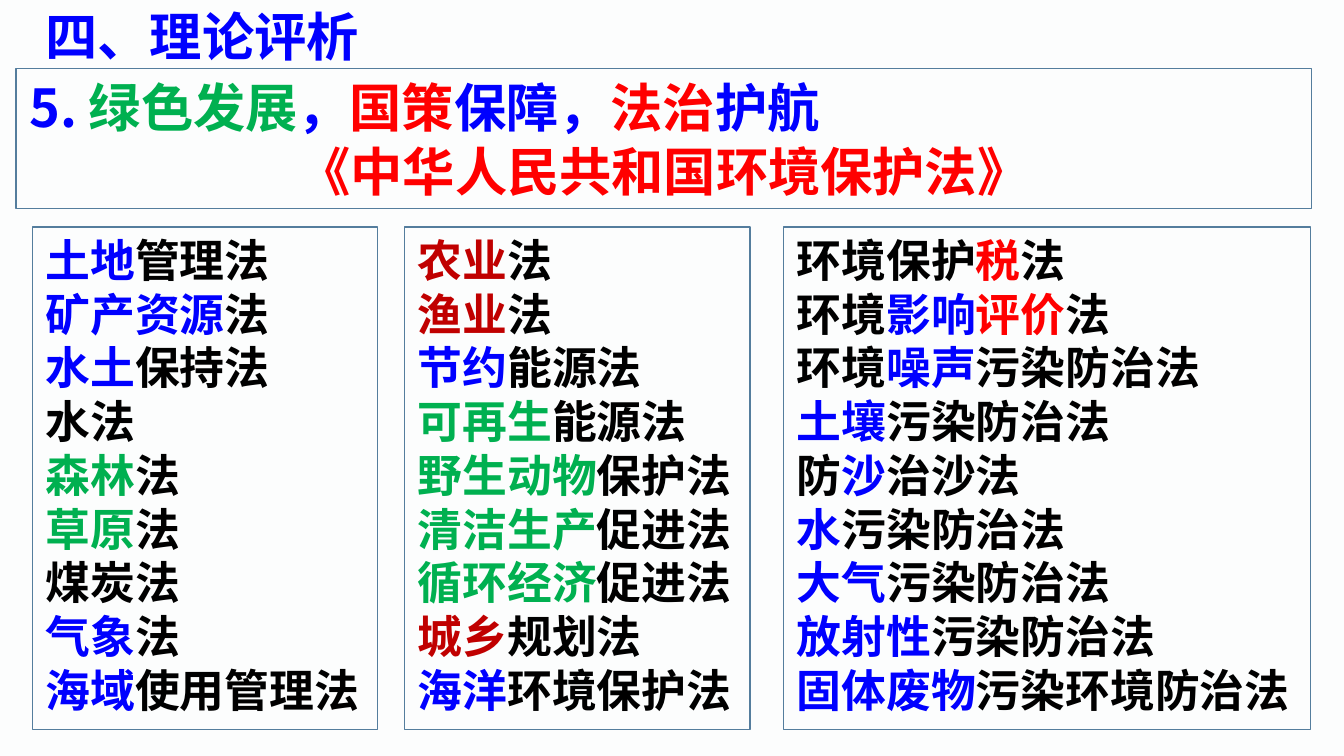
from pptx import Presentation
from pptx.dml.color import RGBColor
from pptx.enum import shapes, text
from pptx.oxml import ns
from pptx.util import Inches, Pt
from lxml import etree

FONT = "Noto Sans CJK SC"
COLORS = {
    "blue": "0000FF", "green": "00B050", "red": "FF0000", "brown": "C00000",
    "black": "000000", "border": "547D9D", "paper": "FCFDFD",
}

# Each line of text is a list of (words, colour name)
HEADLINE = [
    [("5. ", "blue"), ("绿色发展", "green"), ("，", "blue"), ("国策", "red"),
     ("保障，", "blue"), ("法治", "red"), ("护航", "blue")],
    [("《中华人民共和国环境保护法》", "red")],
]
RESOURCE_LAWS = [
    [("土地", "blue"), ("管理法", "black")],
    [("矿产资源", "blue"), ("法", "black")],
    [("水土", "blue"), ("保持法", "black")],
    [("水法", "black")],
    [("森林", "green"), ("法", "black")],
    [("草原", "green"), ("法", "black")],
    [("煤炭法", "black")],
    [("气象", "blue"), ("法", "black")],
    [("海域", "blue"), ("使用管理法", "black")],
]
INDUSTRY_LAWS = [
    [("农业", "brown"), ("法", "black")],
    [("渔业", "brown"), ("法", "black")],
    [("节约", "blue"), ("能源法", "black")],
    [("可再生", "green"), ("能源法", "black")],
    [("野生动物", "green"), ("保护法", "black")],
    [("清洁生产", "green"), ("促进法", "black")],
    [("循环经济", "green"), ("促进法", "black")],
    [("城乡", "brown"), ("规划法", "black")],
    [("海洋", "blue"), ("环境保护法", "black")],
]
POLLUTION_LAWS = [
    [("环境保护", "black"), ("税", "red"), ("法", "black")],
    [("环境", "black"), ("影响", "blue"), ("评价", "red"), ("法", "black")],
    [("环境", "black"), ("噪声", "blue"), ("污染防治法", "black")],
    [("土壤", "blue"), ("污染防治法", "black")],
    [("防", "black"), ("沙", "blue"), ("治沙法", "black")],
    [("水", "blue"), ("污染防治法", "black")],
    [("大气", "blue"), ("污染防治法", "black")],
    [("放射性", "blue"), ("污染防治法", "black")],
    [("固体废物", "blue"), ("污染环境防治法", "black")],
]


def rgb(name):
    return RGBColor.from_string(COLORS[name])


def add_span(para, words, size, color):
    """Add bold coloured words, with the font set for Chinese as well."""
    span = para.add_run()
    span.text = words
    span.font.name = FONT
    span.font.size = Pt(size)
    span.font.bold = True
    span.font.color.rgb = rgb(color)
    east_asian = etree.SubElement(span.font._element, ns.qn("a:ea"))
    east_asian.set("typeface", FONT)


def fill_text(box, lines, size, pitch, wrap=True):
    """Write lines of coloured spans at a fixed line pitch in points."""
    frame = box.text_frame
    frame.word_wrap = wrap
    frame.vertical_anchor = text.MSO_ANCHOR.TOP
    frame.margin_top = Inches(0.04)
    for index, line in enumerate(lines):
        para = frame.paragraphs[0] if index == 0 else frame.add_paragraph()
        para.alignment = text.PP_ALIGN.LEFT
        para.line_spacing = Pt(pitch)
        for words, color in line:
            add_span(para, words, size, color)
    return frame


def add_panel(page, left, top, width, height):
    """Add an unfilled rectangle with a thin border."""
    box = page.shapes.add_shape(
        shapes.MSO_SHAPE.RECTANGLE,
        Inches(left), Inches(top), Inches(width), Inches(height))
    box.shadow.inherit = False
    box.fill.background()
    box.line.color.rgb = rgb("border")
    box.line.width = Pt(0.75)
    return box


def main():
    # A 16:9 page
    deck = Presentation()
    deck.slide_width = Inches(10)
    deck.slide_height = Inches(10) * 9 // 16
    page = deck.slides.add_slide(deck.slide_layouts[6])
    page.background.fill.solid()
    page.background.fill.fore_color.rgb = rgb("paper")

    # Headline panel, with the name of the law centred
    headline = add_panel(page, 0.12, 0.51, 9.64, 1.04)
    frame = fill_text(headline, HEADLINE, 28, 34.3)
    frame.paragraphs[1].alignment = text.PP_ALIGN.CENTER

    # Section title
    title = page.shapes.add_textbox(
        Inches(0.24), Inches(-0.02), Inches(9.51), Inches(0.57))
    fill_text(title, [[("四、理论评析", "blue")]], 28, 34.3)

    # Three columns of laws
    columns = [(0.24, 2.57, RESOURCE_LAWS), (5.83, 3.92, POLLUTION_LAWS),
               (3.01, 2.57, INDUSTRY_LAWS)]
    for left, width, laws in columns:
        panel = add_panel(page, left, 1.69, width, 3.74)
        fill_text(panel, laws, 24, 28.8, wrap=False)

    deck.save("out.pptx")


if __name__ == "__main__":
    main()
